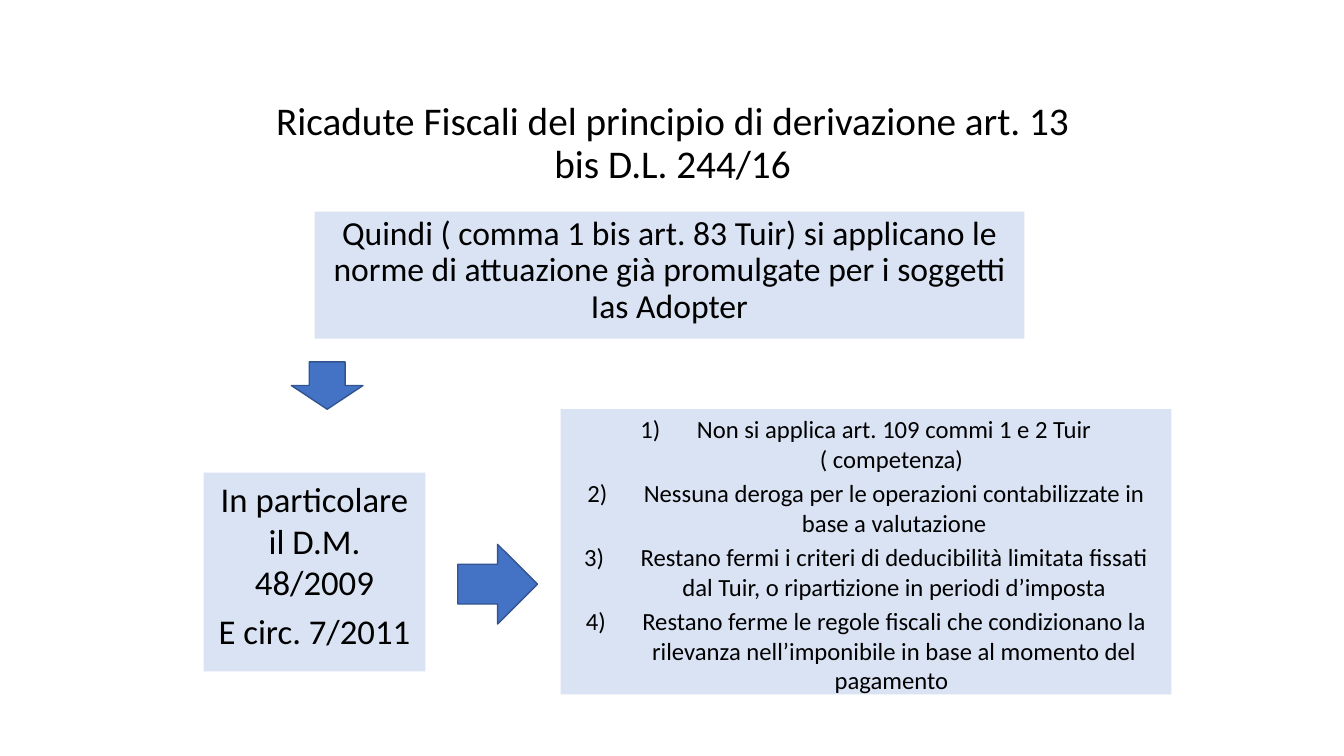
from dataclasses import dataclass

from lxml.etree import SubElement
from pptx import Presentation
from pptx.dml.color import RGBColor
from pptx.enum.shapes import MSO_SHAPE as Preset
from pptx.enum.text import MSO_ANCHOR as Anchor, PP_ALIGN as Align
from pptx.oxml.ns import qn
from pptx.slide import Slide
from pptx.util import Inches, Pt

FONT = "Calibri"
BLACK = "000000"
PALE_BLUE = "DAE3F3"
ARROW_BLUE = "4472C4"
ARROW_EDGE = "325491"
NUMBER_INDENT = Inches(0.56)


@dataclass(frozen=True)
class Box:
    left: float
    top: float
    width: float
    height: float


@dataclass(frozen=True)
class Panel:
    box: Box
    paragraphs: tuple[str, ...]
    size: float
    space_before: float = 0
    line_spacing: float = 1.0
    fill: str | None = PALE_BLUE
    anchor: Anchor = Anchor.TOP
    numbered: bool = False


@dataclass(frozen=True)
class Arrow:
    box: Box
    preset: Preset


PANELS = (
    Panel(
        Box(2.42, 0.29, 8.5, 1.61),
        ("Ricadute Fiscali del principio di derivazione art. 13 bis D.L. 244/16",),
        size=28, line_spacing=0.9, fill=None, anchor=Anchor.BOTTOM,
    ),
    Panel(
        Box(3.12, 2.1, 7.04, 1.26),
        ("Quindi ( comma 1 bis art. 83 Tuir) si applicano le norme di attuazione "
         "già promulgate per i soggetti Ias Adopter",),
        size=24, space_before=10, line_spacing=0.9,
    ),
    Panel(
        Box(2.02, 4.69, 2.2, 1.97),
        ("In particolare il D.M. 48/2009", "E circ. 7/2011"),
        size=24.8, space_before=5,
    ),
    Panel(
        Box(5.56, 4.06, 6.06, 2.83),
        ("Non si applica art. 109 commi 1 e 2 Tuir ( competenza) ",
         "Nessuna deroga per le operazioni contabilizzate in base a valutazione",
         "Restano fermi i criteri di deducibilità limitata fissati dal Tuir, "
         "o ripartizione in periodi d’imposta",
         "Restano ferme le regole fiscali che condizionano la rilevanza "
         "nell’imponibile in base al momento del pagamento "),
        size=17.6, space_before=3.5, numbered=True,
    ),
)

ARROWS = (
    Arrow(Box(2.89, 3.59, 0.71, 0.47), Preset.DOWN_ARROW),
    Arrow(Box(4.54, 5.4, 0.79, 0.79), Preset.RIGHT_ARROW),
)


def color(value: str) -> RGBColor:
    return RGBColor.from_string(value)


def place(box: Box) -> tuple[Inches, Inches, Inches, Inches]:
    return Inches(box.left), Inches(box.top), Inches(box.width), Inches(box.height)


def draw_panel(slide: Slide, panel: Panel) -> None:
    if panel.fill is None:
        holder = slide.shapes.add_textbox(*place(panel.box))
    else:
        holder = slide.shapes.add_shape(Preset.RECTANGLE, *place(panel.box))
        holder.shadow.inherit = False
        holder.fill.solid()
        holder.fill.fore_color.rgb = color(panel.fill)
        holder.line.fill.background()
    frame = holder.text_frame
    frame.word_wrap = True
    frame.vertical_anchor = panel.anchor
    for index, wording in enumerate(panel.paragraphs):
        paragraph = frame.add_paragraph() if index else frame.paragraphs[0]
        paragraph.alignment = Align.CENTER
        paragraph.line_spacing = panel.line_spacing
        paragraph.space_before = Pt(panel.space_before)
        if panel.numbered:
            properties = paragraph._p.get_or_add_pPr()
            properties.set("marL", str(NUMBER_INDENT))
            properties.set("indent", str(-NUMBER_INDENT))
            SubElement(properties, qn("a:buFont"), typeface="+mj-lt")
            SubElement(properties, qn("a:buAutoNum"), type="arabicParenR")
        run = paragraph.add_run()
        run.text = wording
        run.font.name = FONT
        run.font.size = Pt(panel.size)
        run.font.color.rgb = color(BLACK)


def draw_arrow(slide: Slide, arrow: Arrow) -> None:
    pointer = slide.shapes.add_shape(arrow.preset, *place(arrow.box))
    pointer.shadow.inherit = False
    pointer.fill.solid()
    pointer.fill.fore_color.rgb = color(ARROW_BLUE)
    pointer.line.color.rgb = color(ARROW_EDGE)
    pointer.line.width = Pt(1)


def main() -> None:
    deck = Presentation()
    deck.slide_width = Inches(13.33)
    deck.slide_height = Inches(7.5)
    slide = deck.slides.add_slide(deck.slide_layouts[6])
    for panel in PANELS:
        draw_panel(slide, panel)
    for arrow in ARROWS:
        draw_arrow(slide, arrow)
    deck.save("out.pptx")


if __name__ == "__main__":
    main()
